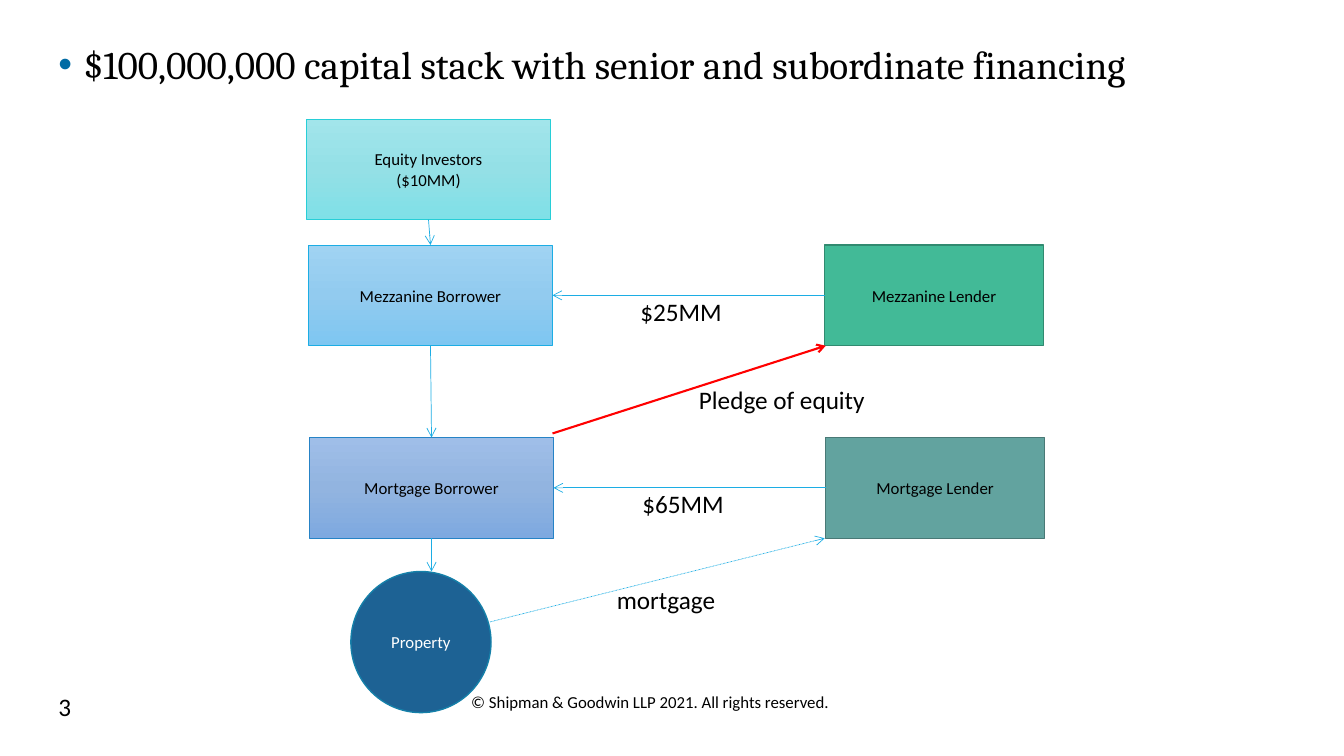
from copy import deepcopy

from lxml import etree
from pptx import Presentation
from pptx.dml.color import RGBColor
from pptx.enum import dml, shapes, text
from pptx.oxml.ns import qn
from pptx.util import Inches, Pt

COLORS = {
    "black": "000000", "white": "FFFFFF", "bullet": "006BA4",
    "arrow": "1CADE4", "pledge": "FF0000",
    "mezz_lender": "42BA97", "mezz_lender_edge": "318A70",
    "mort_lender": "62A39F", "mort_lender_edge": "497976",
    "mort_top": "9FBEE8", "mort_mid": "92B4E0", "mort_low": "7EA9E0",
    "mort_edge": "2683C6",
    "mezz_top": "A0D3F2", "mezz_mid": "92CBEF", "mezz_low": "7EC6F1",
    "mezz_edge": "1CADE4",
    "equity_top": "A2E5EB", "equity_mid": "94E0E6", "equity_low": "7FE0E7",
    "equity_edge": "27CED7",
    "property": "1D6294", "property_edge": "1580A9",
}
RECT, OVAL = shapes.MSO_SHAPE.RECTANGLE, shapes.MSO_SHAPE.OVAL
TOP, LEFT, BOTTOM, RIGHT = range(4)
CENTER = text.PP_ALIGN.CENTER
BORROWER_W, LENDER_W, BOX_H = 2.42, 2.17, 1
MEZZ_Y, MORT_Y = 2.43, 4.34


def rgb(name):
    return RGBColor.from_string(COLORS[name])


def add_run(p, words, size, color="black", font="Calibri"):
    r = p.add_run()
    r.text = words
    r.font.size, r.font.name = Pt(size), font
    r.font.color.rgb = rgb(color)


def fill_gradient(s, names):
    s.fill.gradient()
    s.fill.gradient_angle = 270
    stops = s._element.spPr.find(qn("a:gradFill")).find(qn("a:gsLst"))
    stops.insert(1, deepcopy(stops[0]))
    for i, (stop, name) in enumerate(zip(s.fill.gradient_stops, names)):
        stop.position = i / 2
        stop.color.rgb = rgb(name)


def add_party(slide, lines, box, family, kind=RECT, gradient=False, color="black"):
    s = slide.shapes.add_shape(kind, *map(Inches, box))
    s.shadow.inherit = False
    if gradient:
        fill_gradient(s, [f"{family}_{part}" for part in ("top", "mid", "low")])
    else:
        s.fill.solid()
        s.fill.fore_color.rgb = rgb(family)
    s.line.color.rgb = rgb(f"{family}_edge")
    s.line.width = Pt(0.5 if gradient else 1)
    tf = s.text_frame
    tf.vertical_anchor = text.MSO_ANCHOR.MIDDLE
    for i, words in enumerate(lines):
        p = tf.add_paragraph() if i else tf.paragraphs[0]
        p.alignment = CENTER
        add_run(p, words, 12, color)
    return s


def add_arrow(slide, start, end, begin=None, finish=None,
              color="arrow", width=0.5, dotted=False):
    c = slide.shapes.add_connector(
        shapes.MSO_CONNECTOR.STRAIGHT, *map(Inches, start + end))
    if begin:
        c.begin_connect(*begin)
    if finish:
        c.end_connect(*finish)
    c.line.color.rgb = rgb(color)
    c.line.width = Pt(width)
    if dotted:
        c.line.dash_style = dml.MSO_LINE.ROUND_DOT
    etree.SubElement(c.line._get_or_add_ln(), qn("a:tailEnd"), type="arrow")
    etree.SubElement(c._element.spPr, qn("a:effectLst"))


def add_label(slide, words, left, top, width, size=18, align=CENTER):
    tf = slide.shapes.add_textbox(*map(Inches, (left, top, width, 0.4))).text_frame
    tf.word_wrap = True
    p = tf.paragraphs[0]
    p.alignment = align
    add_run(p, words, size)


def add_heading(slide, words):
    title = slide.shapes.title
    title._element.getparent().remove(title._element)
    s = slide.placeholders[1]
    s.left, s.top, s.width, s.height = map(Inches, (0.48, 0.4, 12.42, 4.88))
    p = s.text_frame.paragraphs[0]
    pPr = p._p.get_or_add_pPr()
    pPr.set("marL", str(Inches(0.25)))
    pPr.set("indent", str(-Inches(0.25)))
    bullet_color = etree.SubElement(pPr, qn("a:buClr"))
    etree.SubElement(bullet_color, qn("a:srgbClr"), val=COLORS["bullet"])
    etree.SubElement(pPr, qn("a:buFont"), typeface="Arial")
    etree.SubElement(pPr, qn("a:buChar"), char="•")
    p.line_spacing, p.space_before = 0.9, Pt(0)
    add_run(p, words, 28, font="Cambria")


def main():
    prs = Presentation()
    prs.slide_width, prs.slide_height = Inches(13.33), Inches(7.5)
    slide = prs.slides.add_slide(prs.slide_layouts[1])

    # Heading and footer
    add_heading(slide, "$100,000,000 capital stack with senior and subordinate financing")
    add_label(slide, "© Shipman & Goodwin LLP 2021. All rights reserved.", 4.2, 6.81, 4.5, 12)
    add_label(slide, "3", 0.48, 6.81, 3, align=text.PP_ALIGN.LEFT)

    # Lenders
    mezz_lender = add_party(slide, ["Mezzanine Lender"],
                            (8.18, MEZZ_Y, LENDER_W, BOX_H), "mezz_lender")
    mort_lender = add_party(slide, ["Mortgage Lender"],
                            (8.19, MORT_Y, LENDER_W, BOX_H), "mort_lender")

    # Ownership chain
    mort = add_party(slide, ["Mortgage Borrower"],
                     (3.07, MORT_Y, BORROWER_W, BOX_H), "mort", gradient=True)
    mezz = add_party(slide, ["Mezzanine Borrower"],
                     (3.06, MEZZ_Y, BORROWER_W, BOX_H), "mezz", gradient=True)
    equity = add_party(slide, ["Equity Investors", "($10MM)"],
                       (3.04, 1.18, BORROWER_W, BOX_H), "equity", gradient=True)
    add_party(slide, ["Property"], (3.48, 5.67, 1.39, 1.4), "property", OVAL, color="white")

    # Loans, ownership and security
    add_arrow(slide, (8.18, 2.93), (5.48, 2.93), (mezz_lender, LEFT), (mezz, RIGHT))
    add_arrow(slide, (8.19, 4.84), (5.49, 4.84), (mort_lender, LEFT), (mort, RIGHT))
    add_arrow(slide, (4.25, 2.18), (4.25, 2.43), (equity, BOTTOM), (mezz, TOP))
    add_arrow(slide, (4.27, 3.43), (4.27, 4.34), (mezz, BOTTOM), (mort, TOP))
    add_arrow(slide, (4.28, 5.34), (4.28, 5.67), (mort, BOTTOM))
    add_arrow(slide, (4.86, 6.17), (8.18, 5.34), dotted=True)
    add_arrow(slide, (5.48, 4.3), (8.19, 3.43), color="pledge", width=1.5)

    # Arrow labels
    add_label(slide, "$25MM", 5.88, 2.89, 1.75)
    add_label(slide, "$65MM", 5.9, 4.8, 1.75)
    add_label(slide, "mortgage", 5.73, 5.75, 1.75)
    add_label(slide, "Pledge of equity", 6.25, 3.76, 3.01)

    prs.save("out.pptx")


if __name__ == "__main__":
    main()
